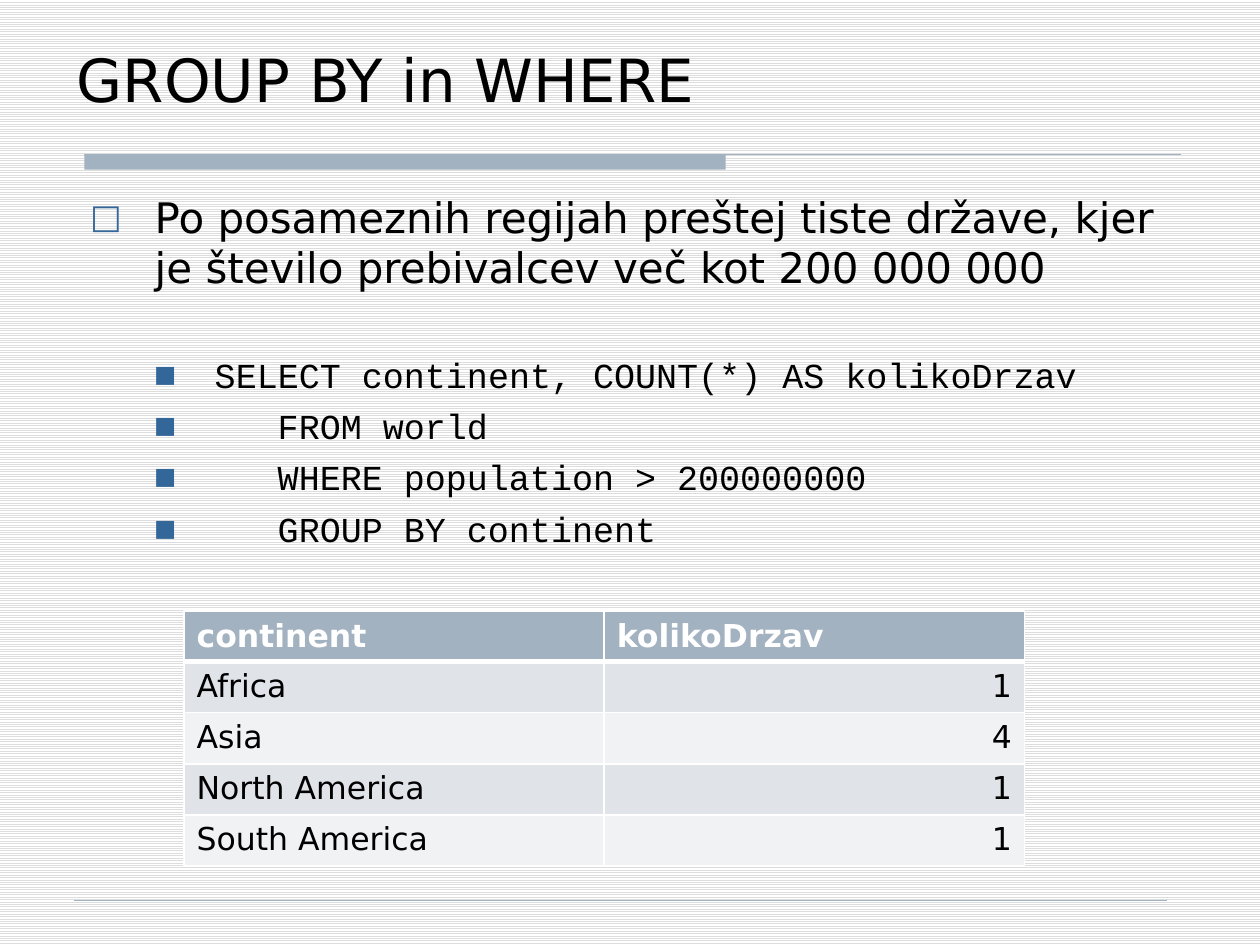
"""Build the slide on GROUP BY with WHERE: a query and its result table."""
from typing import NamedTuple

from pptx import Presentation
from pptx.dml.color import RGBColor
from pptx.enum.dml import MSO_PATTERN
from pptx.enum.shapes import MSO_CONNECTOR, MSO_SHAPE
from pptx.enum.text import MSO_ANCHOR, PP_ALIGN
from pptx.oxml.ns import qn
from pptx.slide import Slide
from pptx.util import Cm, Pt
from lxml import etree

LIGHT_HORIZONTAL = MSO_PATTERN.LIGHT_HORIZONTAL
RECTANGLE, STRAIGHT = MSO_SHAPE.RECTANGLE, MSO_CONNECTOR.STRAIGHT
TOP, MIDDLE, BOTTOM = MSO_ANCHOR.TOP, MSO_ANCHOR.MIDDLE, MSO_ANCHOR.BOTTOM
LEFT, RIGHT = PP_ALIGN.LEFT, PP_ALIGN.RIGHT

BLACK = RGBColor(0x00, 0x00, 0x00)
WHITE = RGBColor(0xFF, 0xFF, 0xFF)
STRIPE = RGBColor(0xDD, 0xDD, 0xDD)
STEEL = RGBColor(0xA3, 0xB2, 0xC1)
BULLET_BLUE = RGBColor(0x33, 0x66, 0x99)
BANDS = (RGBColor(0xE0, 0xE4, 0xE9), RGBColor(0xF0, 0xF2, 0xF4))

SANS, MONO = "DejaVu Sans", "Courier New"
TITLE_FORMAT = {"name": SANS, "size": Pt(34)}
POINT_FORMAT = {"name": SANS, "size": Pt(24)}
CODE_FORMAT = {"name": MONO, "size": Pt(20)}
CELL_FORMAT = {"name": SANS, "size": Pt(18), "bold": False}
HEADER_FORMAT = {"name": SANS, "size": Pt(18), "bold": True}


class Item(NamedTuple):
    """A paragraph with its format, bullet, indents in cm and space before in pt."""
    text: str
    font: dict
    level: int = 0
    bullet: str = ""
    bullet_percent: int = 100
    margin: float = 0
    hanging: float = 0
    before: float = 0


def code_line(text: str, margin: float = 3.78, before: float = 5.3) -> Item:
    """Describe one bulleted line of the query."""
    return Item(text, CODE_FORMAT, 1, "■", 67, margin, margin - 1.29, before)


TITLE = [Item("GROUP BY in WHERE", TITLE_FORMAT)]
BODY = [
    Item("Po posameznih regijah preštej tiste države, kjer je število "
         "prebivalcev več kot 200 000 000", POINT_FORMAT, 0, "□", 80, 1.3, 1.3),
    code_line("SELECT continent, COUNT(*) AS kolikoDrzav", 2.51, 35),
    code_line("FROM world"),
    code_line("WHERE population > 200000000"),
    code_line("GROUP BY continent"),
]
RESULT = [
    ("continent", "kolikoDrzav"),
    ("Africa", "1"),
    ("Asia", "4"),
    ("North America", "1"),
    ("South America", "1"),
]


def write_span(para, text: str, values: dict, color: RGBColor) -> None:
    """Add a formatted span of text to a paragraph."""
    span = para.add_run()
    span.text = text
    for name, value in values.items():
        setattr(span.font, name, value)
    span.font.color.rgb = color


def set_bullet(para, item: Item) -> None:
    """Give a paragraph its hanging bullet."""
    properties = para._p.get_or_add_pPr()
    properties.set("marL", str(Cm(item.margin)))
    properties.set("indent", str(-Cm(item.hanging)))
    color = etree.SubElement(properties, qn("a:buClr"))
    etree.SubElement(color, qn("a:srgbClr"), val=str(BULLET_BLUE))
    etree.SubElement(properties, qn("a:buSzPct"), val=str(item.bullet_percent * 1000))
    etree.SubElement(properties, qn("a:buFont"), typeface=SANS)
    etree.SubElement(properties, qn("a:buChar"), char=item.bullet)


def add_text(page: Slide, left: float, top: float, width: float, height: float,
             items: list[Item], anchor: MSO_ANCHOR = TOP) -> None:
    """Add a wrapped text box holding the given paragraphs."""
    box = page.shapes.add_textbox(Cm(left), Cm(top), Cm(width), Cm(height))
    frame = box.text_frame
    frame.word_wrap = True
    frame.vertical_anchor = anchor
    for index, item in enumerate(items):
        para = frame.add_paragraph() if index else frame.paragraphs[0]
        para.level = item.level
        para.space_before = Pt(item.before)
        if item.bullet:
            set_bullet(para, item)
        write_span(para, item.text, item.font, BLACK)


def add_rule(page: Slide, left: float, right: float, top: float, weight: float) -> None:
    """Draw a horizontal rule."""
    rule = page.shapes.add_connector(STRAIGHT, Cm(left), Cm(top), Cm(right), Cm(top))
    rule.line.color.rgb = STEEL
    rule.line.width = Pt(weight)
    etree.SubElement(rule._element.spPr, qn("a:effectLst"))


def add_bar(page: Slide, left: float, top: float, width: float, height: float) -> None:
    """Draw the thick bar under the title."""
    bar = page.shapes.add_shape(RECTANGLE, Cm(left), Cm(top), Cm(width), Cm(height))
    bar.shadow.inherit = False
    bar.fill.solid()
    bar.fill.fore_color.rgb = STEEL
    bar.line.fill.background()


def set_borders(cell, bottom: float) -> None:
    """Give a cell white borders with the given bottom weight in points."""
    properties = cell._tc.get_or_add_tcPr()
    for side, weight in {"lnL": 1, "lnR": 1, "lnT": 1, "lnB": bottom}.items():
        border = etree.SubElement(properties, qn(f"a:{side}"), w=str(Pt(weight)))
        fill = etree.SubElement(border, qn("a:solidFill"))
        etree.SubElement(fill, qn("a:srgbClr"), val=str(WHITE))


def add_result(page: Slide, left: float, top: float, column: float,
               header_height: float, row_height: float) -> None:
    """Add the banded result table."""
    heights = [header_height] + [row_height] * (len(RESULT) - 1)
    table = page.shapes.add_table(len(RESULT), 2, Cm(left), Cm(top),
                                  Cm(2 * column), Cm(sum(heights))).table
    for table_column in table.columns:
        table_column.width = Cm(column)
    for row, (values, height) in enumerate(zip(RESULT, heights)):
        table.rows[row].height = Cm(height)
        header = row == 0
        for column_index, text in enumerate(values):
            cell = table.cell(row, column_index)
            set_borders(cell, 3 if header or row == 0 else 1)
            cell.fill.solid()
            cell.fill.fore_color.rgb = STEEL if header else BANDS[(row - 1) % 2]
            cell.vertical_anchor = MIDDLE if header else TOP
            para = cell.text_frame.paragraphs[0]
            para.alignment = RIGHT if column_index and not header else LEFT
            write_span(para, text, HEADER_FORMAT if header else CELL_FORMAT,
                       WHITE if header else BLACK)


def main() -> None:
    """Build and save the deck."""
    deck = Presentation()
    deck.slide_width, deck.slide_height = Cm(25.4), Cm(19.05)
    page = deck.slides.add_slide(deck.slide_layouts[6])
    background = page.background.fill
    background.patterned()
    background.pattern = LIGHT_HORIZONTAL
    background.fore_color.rgb = STRIPE
    background.back_color.rgb = WHITE
    add_bar(page, 1.7, 3.12, 12.93, 0.3)
    add_rule(page, 1.7, 23.8, 3.12, 0.75)
    add_rule(page, 1.5, 23.52, 18.14, 0.25)
    add_text(page, 1.3, 0.53, 22.23, 1.9, TITLE, BOTTOM)
    add_text(page, 1.57, 3.73, 22.23, 14, BODY)
    add_result(page, 3.71, 12.32, 8.47, 0.97, 1.03)
    deck.save("out.pptx")


if __name__ == "__main__":
    main()
